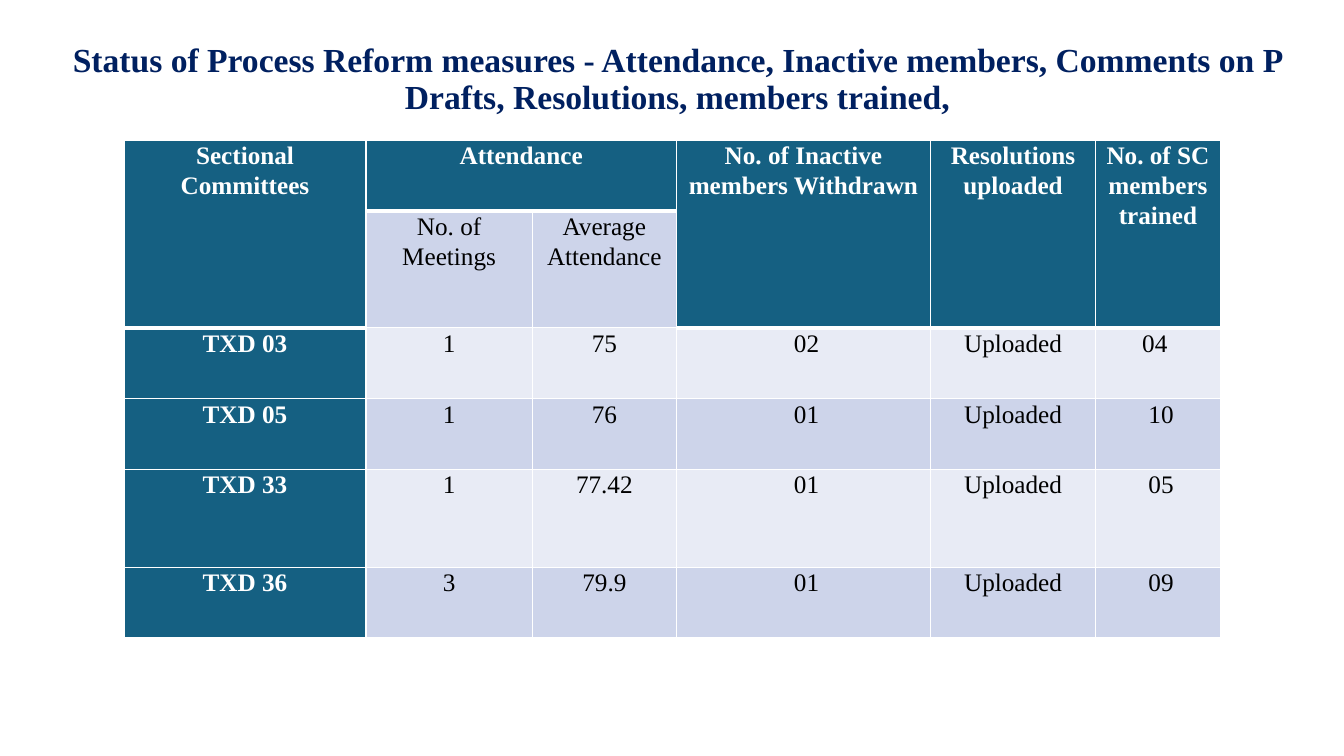
"""Build the slide on the status of process reform measures."""
from lxml.etree import SubElement
from pptx import Presentation
from pptx.dml.color import RGBColor
from pptx.enum.text import MSO_ANCHOR, MSO_AUTO_SIZE, PP_ALIGN
from pptx.oxml.ns import qn
from pptx.util import Pt

TITLE = ("Status of Process Reform measures - Attendance, Inactive members, "
         "Comments on P Drafts, Resolutions, members trained,")
ROWS = [
    ["Sectional Committees", "Attendance", "", "No. of Inactive members Withdrawn",
     "Resolutions uploaded", "No. of SC members trained"],
    ["", "No. of Meetings", "Average Attendance", "", "", ""],
    ["TXD 03", "1", "75", " 02", "Uploaded", "04 "],
    ["TXD 05", "1", "76", " 01", "Uploaded", " 10"],
    ["TXD 33", "1", "77.42", " 01", "Uploaded", " 05"],
    ["TXD 36", "3", "79.9", " 01", "Uploaded", " 09"],
]
MERGES = [((0, 0), (1, 0)), ((0, 1), (0, 2))] + [((0, c), (1, c)) for c in (3, 4, 5)]
COLUMN_WIDTHS = [172.8, 118.8, 103, 181.4, 118.1, 88.9]
ROW_HEIGHTS = [50.6, 83.5, 50.6, 50.6, 69.8, 50.6]
TABLE_LEFT, TABLE_TOP = 88.6, 100.1
FONT = "Times New Roman"
NAVY, TEAL, WHITE, BLACK = "002060", "156082", "FFFFFF", "000000"
BANDS = ["E8EBF5", "CDD4EA"]
HEADER_BORDERS = {"lnL": 1, "lnR": 1, "lnT": 1, "lnB": 3}


def color(value):
    return RGBColor.from_string(value)


def style(paragraph, size, hue, bold, spacing):
    paragraph.alignment = PP_ALIGN.CENTER
    paragraph.line_spacing = spacing
    font = paragraph.font
    font.name, font.size, font.bold = FONT, Pt(size), bold
    font.color.rgb = color(hue)


def add_borders(cell):
    properties = cell._tc.get_or_add_tcPr()
    for side, width in HEADER_BORDERS.items():
        line = SubElement(properties, qn(f"a:{side}"), w=str(Pt(width)))
        fill = SubElement(line, qn("a:solidFill"))
        SubElement(fill, qn("a:srgbClr"), val=WHITE)


def add_title(slide):
    title = slide.shapes.title
    title.left, title.top, title.width, title.height = Pt(35.3), Pt(28.8), Pt(897.1), Pt(56.9)
    frame = title.text_frame
    frame.text = TITLE
    frame.word_wrap = True
    frame.auto_size = MSO_AUTO_SIZE.NONE
    frame.vertical_anchor = MSO_ANCHOR.MIDDLE
    style(frame.paragraphs[0], 24, NAVY, True, 0.9)


def fill_cell(cell, text, row, column):
    heading = row == 0 or (row == 1 and column not in (1, 2))
    if heading:
        add_borders(cell)
    emphasized = heading or column == 0
    cell.fill.solid()
    cell.fill.fore_color.rgb = color(TEAL if emphasized else BANDS[row % 2])
    cell.margin_left = cell.margin_right = Pt(5)
    cell.margin_top = cell.margin_bottom = 0
    cell.text = text
    paragraph = cell.text_frame.paragraphs[0]
    paragraph.space_after = Pt(8)
    style(paragraph, 18, WHITE if emphasized else BLACK, emphasized, 1.07)


def add_status_table(slide):
    table = slide.shapes.add_table(
        len(ROWS), len(COLUMN_WIDTHS), Pt(TABLE_LEFT), Pt(TABLE_TOP),
        Pt(sum(COLUMN_WIDTHS)), Pt(sum(ROW_HEIGHTS))).table
    for column, width in zip(table.columns, COLUMN_WIDTHS):
        column.width = Pt(width)
    for row, height in zip(table.rows, ROW_HEIGHTS):
        row.height = Pt(height)
    for r, texts in enumerate(ROWS):
        for c, text in enumerate(texts):
            fill_cell(table.cell(r, c), text, r, c)
    for first, last in MERGES:
        table.cell(*first).merge(table.cell(*last))


def main():
    deck = Presentation()
    deck.slide_width, deck.slide_height = Pt(960), Pt(540)
    slide = deck.slides.add_slide(deck.slide_layouts[5])
    add_title(slide)
    add_status_table(slide)
    deck.save("out.pptx")


if __name__ == "__main__":
    main()
